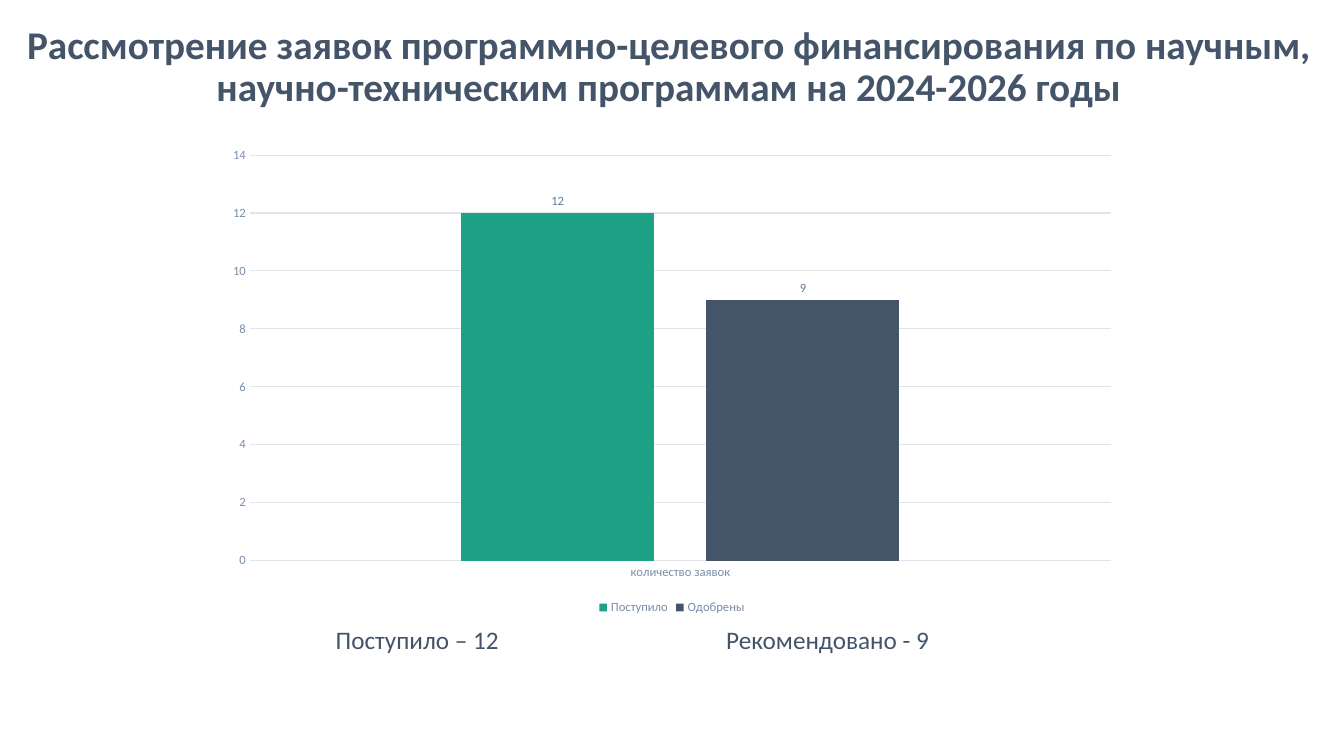
import pptx
import pptx.util
import pptx.chart.data
import pptx.dml.color
import pptx.enum.chart
import pptx.enum.shapes
import pptx.enum.text
import pptx.oxml.ns
import lxml.etree

EMU_PER_PX = 9144
FONT = "Calibri"
DARK, GREEN, WHITE = "445469", "1EA185", "FFFFFF"
AXIS_TEXT, LABEL_TEXT, GRID = "7A8EA9", "667D9C", "E0E5EB"


def px(length):
    return pptx.util.Emu(length * EMU_PER_PX)


def color(value):
    return pptx.dml.color.RGBColor.from_string(value)


def set_font(font, size, value, bold=False):
    font.name = FONT
    font.size = pptx.util.Pt(size)
    font.bold = bold
    font.color.rgb = color(value)


def set_line(line, value, width):
    line.color.rgb = color(value)
    line.width = pptx.util.Pt(width)


def add_title(page, box, text):
    title = page.shapes.title
    title.left, title.top, title.width, title.height = map(px, box)
    frame = title.text_frame
    frame.text = text
    frame.word_wrap = True
    frame.auto_size = pptx.enum.text.MSO_AUTO_SIZE.NONE
    frame.vertical_anchor = pptx.enum.text.MSO_ANCHOR.TOP
    para = frame.paragraphs[0]
    para.alignment = pptx.enum.text.PP_ALIGN.CENTER
    para.line_spacing = 0.9
    set_font(para.font, 28, DARK, True)


def add_summary(page, box, entries):
    panel = page.shapes.add_shape(
        pptx.enum.shapes.MSO_SHAPE.RECTANGLE, *map(px, box))
    panel.shadow.inherit = False
    panel.fill.background()
    set_line(panel.line, WHITE, 1)
    frame = panel.text_frame
    frame.word_wrap = True
    frame.vertical_anchor = pptx.enum.text.MSO_ANCHOR.MIDDLE
    para = frame.paragraphs[0]
    para.alignment = pptx.enum.text.PP_ALIGN.LEFT
    qn = pptx.oxml.ns.qn
    stops = lxml.etree.SubElement(para._p.get_or_add_pPr(), qn("a:tabLst"))
    for text, center in entries:
        lxml.etree.SubElement(
            stops, qn("a:tab"), pos=str(px(center)), algn="ctr")
        para.add_run().text = "\t" + text
    set_font(para.font, 18, DARK)


def add_applications_chart(page, box, category, columns):
    data = pptx.chart.data.CategoryChartData()
    data.categories = [category]
    for name, count, _ in columns:
        data.add_series(name, [count])
    chart = page.shapes.add_chart(
        pptx.enum.chart.XL_CHART_TYPE.COLUMN_CLUSTERED,
        *map(px, box), data).chart
    chart.has_title = False
    set_font(chart.font, 10, DARK)

    chart.has_legend = True
    chart.legend.position = pptx.enum.chart.XL_LEGEND_POSITION.BOTTOM
    chart.legend.include_in_layout = False
    set_font(chart.legend.font, 9, AXIS_TEXT)

    for axis in (chart.category_axis, chart.value_axis):
        axis.major_tick_mark = pptx.enum.chart.XL_TICK_MARK.NONE
        axis.minor_tick_mark = pptx.enum.chart.XL_TICK_MARK.NONE
        set_font(axis.tick_labels.font, 9, AXIS_TEXT)
    set_line(chart.category_axis.format.line, GRID, 0.75)
    values = chart.value_axis
    values.minimum_scale, values.maximum_scale = 0, 14
    values.major_unit = 2
    values.format.line.fill.background()
    set_line(values.major_gridlines.format.line, GRID, 0.75)

    plot = chart.plots[0]
    plot.gap_width, plot.overlap = 219, -27
    plot.vary_by_categories = False
    for series, (_, _, fill) in zip(plot.series, columns):
        series.format.fill.solid()
        series.format.fill.fore_color.rgb = color(fill)
        labels = series.data_labels
        labels.show_value = True
        labels.position = pptx.enum.chart.XL_LABEL_POSITION.OUTSIDE_END
        set_font(labels.font, 9, LABEL_TEXT)


def main():
    deck = pptx.Presentation()
    deck.slide_width, deck.slide_height = px(1333), px(750)
    page = deck.slides.add_slide(deck.slide_layouts[5])
    add_title(
        page, (11, 20, 1304, 75),
        "Рассмотрение заявок программно-целевого финансирования по научным, "
        "научно-техническим программам на 2024-2026 годы")
    add_summary(
        page, (165, 614, 926, 41),
        [("Поступило – 12", 239), ("Рекомендовано - 9", 646)])
    add_applications_chart(
        page, (213, 137, 907, 477), "количество заявок",
        [("Поступило", 12, GREEN), ("Одобрены", 9, DARK)])
    deck.save("out.pptx")


if __name__ == "__main__":
    main()
